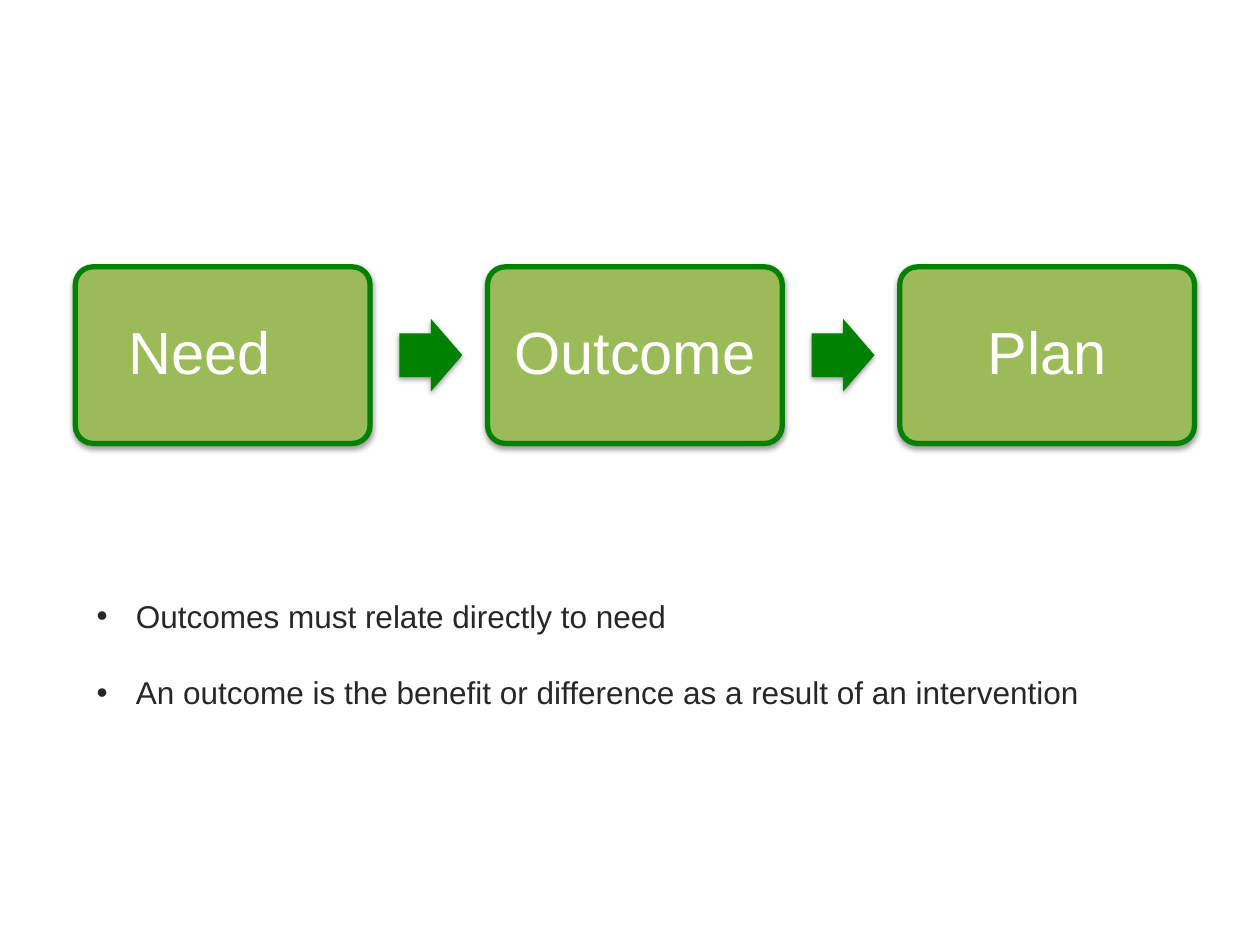
from lxml.etree import SubElement
from pptx import Presentation
from pptx.dml.color import RGBColor
from pptx.enum.shapes import MSO_SHAPE as Shape
from pptx.enum.text import MSO_ANCHOR as Anchor, MSO_AUTO_SIZE as AutoSize, PP_ALIGN as Align
from pptx.oxml.ns import qn
from pptx.util import Cm, Pt

COLORS = {"box": "9BBB59", "accent": "008000", "label": "FFFFFF",
          "body": "262727", "shadow": "000000"}
STEPS = ["Need\t", "Outcome", "Plan"]
POINTS = ["Outcomes must relate directly to need",
          "An outcome is the benefit or difference as a result of an intervention"]
STEP_LEFT, STEP_PITCH = 1.52, 8.31
STEP_TOP, STEP_WIDTH, STEP_HEIGHT = 5.38, 5.94, 3.56
ARROW_OFFSET, ARROW_WIDTH, ARROW_HEIGHT = 6.53, 1.27, 1.47


def color(name):
    return RGBColor.from_string(COLORS[name])


def write(paragraph, text, *, size, ink, font="Arial", align=None,
          line_spacing=None, space_before=0, bullet=None, indent=0.79):
    """Fill a paragraph; a bullet gets a hanging indent in centimetres."""
    paragraph.text = text
    paragraph.alignment = align
    paragraph.line_spacing = line_spacing
    paragraph.space_before = Pt(space_before)
    if bullet:
        properties = paragraph._p.get_or_add_pPr()
        properties.set("marL", str(Cm(indent)))
        properties.set("indent", str(-Cm(indent)))
        SubElement(properties, qn("a:buFont"), typeface="Arial")
        SubElement(properties, qn("a:buChar"), char=bullet)
    for run in paragraph.runs:
        run.font.name = font
        run.font.size = Pt(size)
        run.font.color.rgb = color(ink)


class SlideBuilder:
    def __init__(self, presentation):
        self.slide = presentation.slides.add_slide(presentation.slide_layouts[6])
        self.label_style = dict(size=34, ink="label", align=Align.CENTER, line_spacing=0.9)
        self.point_style = dict(size=18, ink="body", bullet="•")

    def shape(self, kind, left, top, width, height, fill, adjustments):
        """Add a filled preset shape with a soft shadow below it."""
        shape = self.slide.shapes.add_shape(kind, Cm(left), Cm(top), Cm(width), Cm(height))
        for index, value in enumerate(adjustments):
            shape.adjustments[index] = value
        shape.fill.solid()
        shape.fill.fore_color.rgb = color(fill)
        shape.line.fill.background()
        shape.shadow.inherit = False
        effects = shape._element.spPr.find(qn("a:effectLst"))
        shadow = SubElement(effects, qn("a:outerShdw"), blurRad=str(Pt(3.1)),
                            dist=str(Pt(1.6)), dir="5400000", rotWithShape="0")
        shade = SubElement(shadow, qn("a:srgbClr"), val=COLORS["shadow"])
        SubElement(shade, qn("a:alpha"), val="38000")
        return shape

    def step(self, left, label):
        box = self.shape(Shape.ROUNDED_RECTANGLE, left, STEP_TOP, STEP_WIDTH,
                         STEP_HEIGHT, "box", [0.1])
        box.line.color.rgb = color("accent")
        box.line.width = Pt(3)
        frame = box.text_frame
        frame.word_wrap = True
        frame.vertical_anchor = Anchor.MIDDLE
        frame.margin_left = frame.margin_right = Cm(0.36)
        frame.margin_top = frame.margin_bottom = Cm(0.36)
        write(frame.paragraphs[0], label, **self.label_style)

    def arrow(self, left):
        top = STEP_TOP + (STEP_HEIGHT - ARROW_HEIGHT) / 2
        self.shape(Shape.RIGHT_ARROW, left, top, ARROW_WIDTH, ARROW_HEIGHT,
                   "accent", [0.6, 0.5])

    def bullets(self, left, top, width, height, points, gap):
        box = self.slide.shapes.add_textbox(Cm(left), Cm(top), Cm(width), Cm(height))
        frame = box.text_frame
        frame.word_wrap = True
        frame.auto_size = AutoSize.SHAPE_TO_FIT_TEXT
        for index, point in enumerate(points):
            paragraph = frame.add_paragraph() if index else frame.paragraphs[0]
            write(paragraph, point, space_before=gap if index else 0, **self.point_style)


def main():
    presentation = Presentation()
    presentation.slide_width, presentation.slide_height = Cm(25.4), Cm(19.05)
    builder = SlideBuilder(presentation)
    for index, label in enumerate(STEPS):
        left = STEP_LEFT + index * STEP_PITCH
        builder.step(left, label)
        if index < len(STEPS) - 1:
            builder.arrow(left + ARROW_OFFSET)
    builder.bullets(1.7, 11.91, 22.6, 2.57, POINTS, gap=22)
    presentation.save("out.pptx")


if __name__ == "__main__":
    main()
